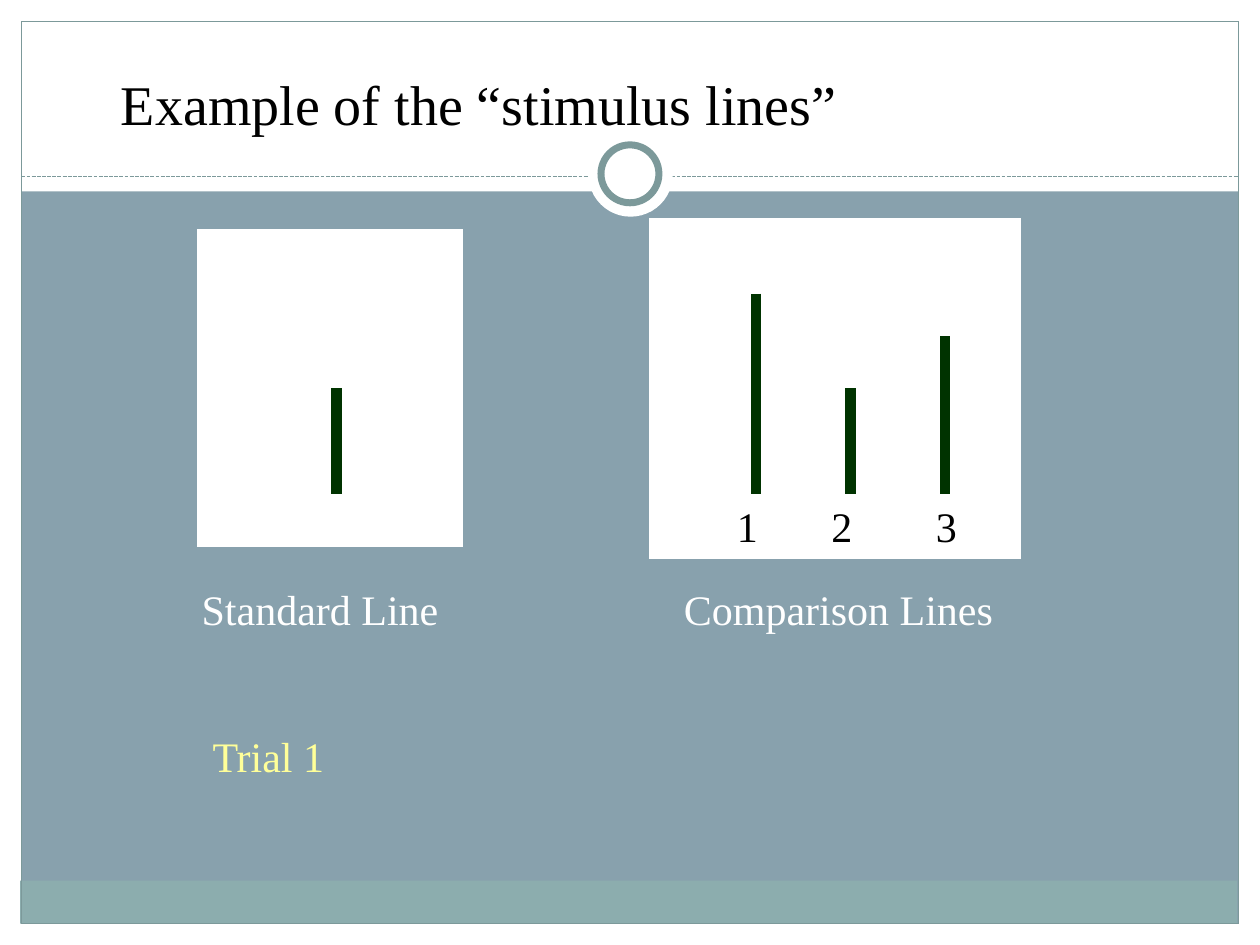
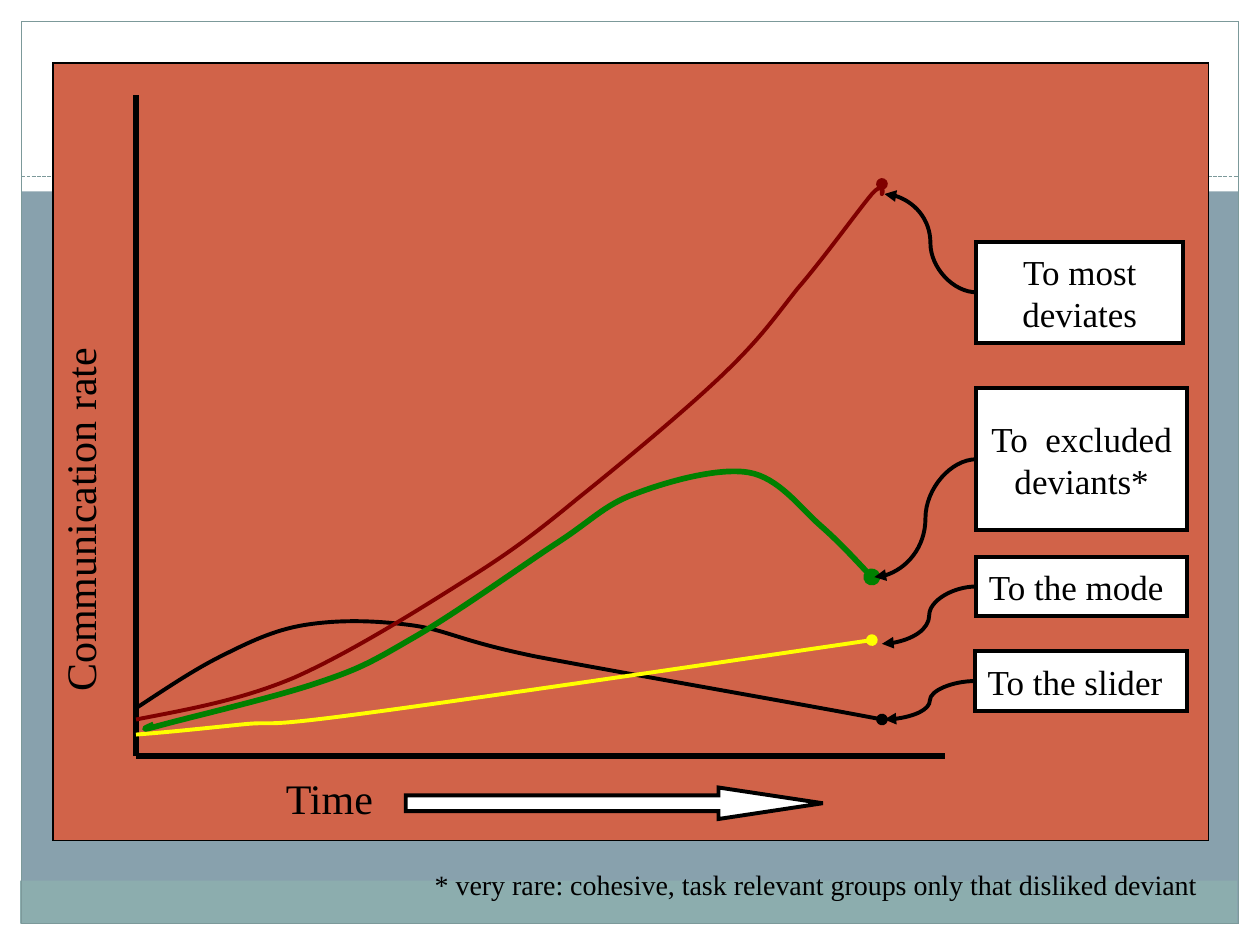
from lxml import etree
from pptx import Presentation
from pptx.dml.color import RGBColor
from pptx.enum.dml import MSO_LINE
from pptx.enum.shapes import MSO_CONNECTOR, MSO_SHAPE
from pptx.enum.text import MSO_ANCHOR, PP_ALIGN
from pptx.oxml import parse_xml
from pptx.oxml.ns import nsdecls, qn
from pptx.util import Inches, Pt

FONT = "Times New Roman"
BLACK, WHITE = "000000", "FFFFFF"
SLATE, TEAL, FRAME = "88A1AD", "8CADAE", "7C999A"
RUST, STIMULUS, PALE_YELLOW = "D16349", "003300", "FFFF99"

WIDTH, HEIGHT, MARGIN = 10, 7.5, 0.17
HEADER_RULE_Y = 1.4

# Slide 1: cards (left, top, width, height), stimulus lines (x, top), captions
TITLE = "Example of the “stimulus lines”"
CARDS = [(5.17, 1.75, 2.92, 2.67), (1.58, 1.83, 2.08, 2.5)]
STIMULUS_LINES = [(2.67, 3.08), (6, 2.33), (6.75, 3.08), (7.5, 2.67)]
STIMULUS_BOTTOM = 3.92
LINE_NUMBERS = "1\t2\t3"
NUMBER_TABS = [0.75, 1.58]
CAPTIONS = [
    ("Standard Line", (1.5, 4.58, 2.08, 0.5), WHITE),
    ("Comparison Lines", (5.33, 4.58, 2.65, 0.5), WHITE),
    ("Trial 1", (1.58, 5.75, 1.1, 0.5), PALE_YELLOW),
]

# Slide 2: each curve is a start point followed by Bezier segments
ORIGIN, AXIS_TOP, AXIS_RIGHT = (1.08, 6), 0.75, 7.5
CURVES = [
    {"color": BLACK, "weight": 2.25, "start": (1.08, 5.62), "segments": [
        ((1.31, 5.47), (1.53, 5.32), (1.75, 5.21)),
        ((1.97, 5.1), (2.17, 5), (2.42, 4.96)),
        ((2.67, 4.92), (2.94, 4.92), (3.25, 4.96)),
        ((3.56, 5), (3.62, 5.08), (4.25, 5.21)),
        ((4.88, 5.33), (6.54, 5.62), (7, 5.71))]},
    {"color": "FFFF00", "weight": 2.25, "start": (1.08, 5.83), "segments": [
        ((1.35, 5.81), (1.62, 5.78), (1.92, 5.75)),
        ((2.21, 5.72), (2, 5.78), (2.83, 5.67)),
        ((3.67, 5.56), (6.24, 5.18), (6.92, 5.08))]},
    {"color": "800000", "weight": 2.25, "start": (1.08, 5.71), "segments": [
        ((1.49, 5.63), (1.9, 5.56), (2.33, 5.38)),
        ((2.76, 5.19), (3.29, 4.86), (3.67, 4.62)),
        ((4.04, 4.39), (4.24, 4.24), (4.58, 3.96)),
        ((4.93, 3.68), (5.46, 3.24), (5.75, 2.96)),
        ((6.04, 2.68), (6.14, 2.53), (6.33, 2.29)),
        ((6.53, 2.06), (6.81, 1.67), (6.92, 1.54)),
        ((7.03, 1.42), (6.99, 1.56), (7, 1.54)),
        ((7.01, 1.53), (7, 1.47), (7, 1.46))]},
    {"color": "008000", "weight": 3.25, "start": (1.22, 5.75), "segments": [
        ((1.15, 5.78), (1.08, 5.81), (1.3, 5.75)),
        ((1.52, 5.69), (2.2, 5.53), (2.52, 5.42)),
        ((2.85, 5.31), (2.94, 5.26), (3.25, 5.08)),
        ((3.57, 4.9), (4.09, 4.53), (4.39, 4.33)),
        ((4.69, 4.14), (4.79, 4.01), (5.04, 3.92)),
        ((5.3, 3.82), (5.7, 3.71), (5.94, 3.75)),
        ((6.18, 3.79), (6.35, 4.03), (6.51, 4.17)),
        ((6.67, 4.31), (6.85, 4.51), (6.92, 4.58))]},
]
# Label, box, alignment, point its arrow leads to
CURVE_LABELS = [
    ("To most deviates", (7.75, 1.92, 1.64, 0.8), PP_ALIGN.CENTER, (7.02, 1.54)),
    ("To  excluded deviants*", (7.75, 3.08, 1.67, 1.13), PP_ALIGN.CENTER, (6.94, 4.58)),
    ("To the mode", (7.75, 4.42, 1.67, 0.47), PP_ALIGN.LEFT, (7, 5.11)),
    ("To the slider", (7.74, 5.17, 1.68, 0.47), PP_ALIGN.LEFT, (7.02, 5.71)),
]
FOOTNOTE = "* very rare: cohesive, task relevant groups only that disliked deviant"


def rgb(color):
    return RGBColor.from_string(color)


def inches(values):
    return [Inches(value) for value in values]


def style_line(line, color, weight):
    line.color.rgb = rgb(color)
    line.width = Pt(weight)


def add_preset(slide, preset, box, fill=None, line=None, weight=0.75):
    shape = slide.shapes.add_shape(preset, *inches(box))
    shape.shadow.inherit = False
    if fill:
        shape.fill.solid()
        shape.fill.fore_color.rgb = rgb(fill)
    else:
        shape.fill.background()
    if line:
        style_line(shape.line, line, weight)
        etree.SubElement(shape.line._get_or_add_ln(), qn("a:miter"), lim="800000")
    else:
        shape.line.fill.background()
    return shape


def add_line(slide, start, end, color, weight, kind=MSO_CONNECTOR.STRAIGHT):
    connector = slide.shapes.add_connector(kind, *inches((*start, *end)))
    style_line(connector.line, color, weight)
    etree.SubElement(connector._element.spPr, qn("a:effectLst"))
    return connector


def add_tail(shape, kind):
    """Put an arrowhead of the given kind at the end of a line."""
    line = shape.line._get_or_add_ln()
    etree.SubElement(line, qn("a:tailEnd"), type=kind)


def write(shape, text, size, color=BLACK, align=PP_ALIGN.LEFT, wrap=True):
    frame = shape.text_frame
    frame.word_wrap = wrap
    frame.vertical_anchor = MSO_ANCHOR.MIDDLE
    paragraph = frame.paragraphs[0]
    paragraph.alignment = align
    run = paragraph.add_run()
    run.text = text
    run.font.name = FONT
    run.font.size = Pt(size)
    run.font.color.rgb = rgb(color)
    return shape


def add_text(slide, text, box, size, **style):
    return write(slide.shapes.add_textbox(*inches(box)), text, size, **style)


def move_behind(shapes, target):
    """Move shapes to the back of a master or layout."""
    tree = target.shapes._spTree
    for position, shape in enumerate(shapes, start=2):
        shape._element._nvXxPr.cNvPr.set("id", str(100 + position))
        tree.insert(position, shape._element)


def build_frame(slide, master):
    """Give the master its background, bands, margins and outline."""
    background = master.background.fill
    background.solid()
    background.fore_color.rgb = rgb(SLATE)
    far_x, far_y = WIDTH - MARGIN, HEIGHT - MARGIN
    header = add_preset(slide, MSO_SHAPE.RECTANGLE, (0, 0, WIDTH, 1.52), WHITE)
    rule = add_line(slide, (MARGIN, HEADER_RULE_Y), (far_x, HEADER_RULE_Y), FRAME, 0.75)
    rule.line.dash_style = MSO_LINE.SQUARE_DOT
    margins = [
        add_preset(slide, MSO_SHAPE.RECTANGLE, box, WHITE)
        for box in [(0, far_y, WIDTH, MARGIN), (0, 0, WIDTH, MARGIN),
                    (far_x, 0, MARGIN, HEIGHT), (0, 0, MARGIN, HEIGHT)]
    ]
    footer = add_preset(slide, MSO_SHAPE.RECTANGLE, (0.16, 6.99, 9.66, 0.34), TEAL)
    outline = add_preset(slide, MSO_SHAPE.RECTANGLE,
                         (MARGIN, MARGIN, far_x - MARGIN, far_y - MARGIN), line=FRAME)
    move_behind([header, rule, *margins, footer, outline], master)


def build_ring(slide, layout):
    disc = add_preset(slide, MSO_SHAPE.OVAL, (4.67, 1.05, 0.67, 0.67), WHITE)
    ring = add_preset(slide, MSO_SHAPE.OVAL, (4.77, 1.15, 0.46, 0.46), WHITE, FRAME, 4)
    move_behind([disc, ring], layout)


def build_stimulus_slide(slide):
    title = slide.shapes.title
    title.left, title.top, title.width, title.height = inches((0.42, 0.5, 9, 0.63))
    write(title, TITLE, 32).text_frame.margin_left = Inches(0.54)

    for card in CARDS:
        add_preset(slide, MSO_SHAPE.RECTANGLE, card, WHITE, WHITE, 2.25)
    for x, top in STIMULUS_LINES:
        add_line(slide, (x, top), (x, STIMULUS_BOTTOM), STIMULUS, 6.25)

    numbers = add_text(slide, LINE_NUMBERS, (5.75, 3.92, 2.33, 0.5), 24)
    tabs = "".join(f'<a:tab pos="{Inches(tab)}" algn="l"/>' for tab in NUMBER_TABS)
    properties = numbers.text_frame.paragraphs[0]._p.get_or_add_pPr()
    properties.append(parse_xml(f'<a:tabLst {nsdecls("a")}>{tabs}</a:tabLst>'))

    for caption, box, color in CAPTIONS:
        add_text(slide, caption, box, 24, color=color, align=PP_ALIGN.CENTER, wrap=False)


def bend(freeform):
    """Turn every three line segments of a freeform into one Bezier segment."""
    steps = list(freeform._element.iter(qn("a:lnTo")))
    for first, second, end in zip(steps[::3], steps[1::3], steps[2::3]):
        first.tag = qn("a:cubicBezTo")
        for step in (second, end):
            first.append(step[0])
            step.getparent().remove(step)


def add_curve(slide, color, weight, start, segments):
    builder = slide.shapes.build_freeform(*inches(start))
    points = [inches(point) for segment in segments for point in segment]
    builder.add_line_segments(points, close=False)
    curve = builder.convert_to_shape()
    bend(curve)
    curve.shadow.inherit = False
    curve.fill.background()
    style_line(curve.line, color, weight)
    add_tail(curve, "oval")


def build_rate_slide(slide):
    add_preset(slide, MSO_SHAPE.RECTANGLE, (0.42, 0.5, 9.17, 6.17), RUST, BLACK)
    add_line(slide, ORIGIN, (ORIGIN[0], AXIS_TOP), BLACK, 3)
    add_line(slide, ORIGIN, (AXIS_RIGHT, ORIGIN[1]), BLACK, 3)
    for curve in CURVES:
        add_curve(slide, **curve)

    for label, box, align, target in CURVE_LABELS:
        label_box = add_preset(slide, MSO_SHAPE.RECTANGLE, box, WHITE, BLACK, 2.25)
        write(label_box, label, 20, align=align)
        left_middle = (box[0], box[1] + box[3] / 2)
        pointer = add_line(slide, left_middle, target, BLACK, 2.25, MSO_CONNECTOR.CURVE)
        pointer.begin_connect(label_box, 1)
        add_tail(pointer, "triangle")

    add_text(slide, "Time", (2.17, 6.08, 0.99, 0.5), 24, wrap=False)
    time_arrow = add_preset(slide, MSO_SHAPE.RIGHT_ARROW, (3.22, 6.25, 3.31, 0.25),
                            WHITE, BLACK, 2.25)
    time_arrow.adjustments[1] = 3.31
    rate = add_text(slide, "Communication rate", (0.33, 1.17, 0.6, 4.42), 24)
    rate.text_frame._txBody.bodyPr.set("vert", "vert270")
    add_text(slide, FOOTNOTE, (3.33, 6.83, 6.29, 0.37), 16,
             align=PP_ALIGN.CENTER, wrap=False)


def main():
    deck = Presentation()
    deck.slide_width, deck.slide_height = inches((WIDTH, HEIGHT))
    title_only, blank = deck.slide_layouts[5], deck.slide_layouts[6]
    stimulus_slide = deck.slides.add_slide(title_only)
    build_frame(stimulus_slide, deck.slide_master)
    build_ring(stimulus_slide, title_only)
    build_stimulus_slide(stimulus_slide)
    build_rate_slide(deck.slides.add_slide(blank))
    deck.save("out.pptx")


if __name__ == "__main__":
    main()
